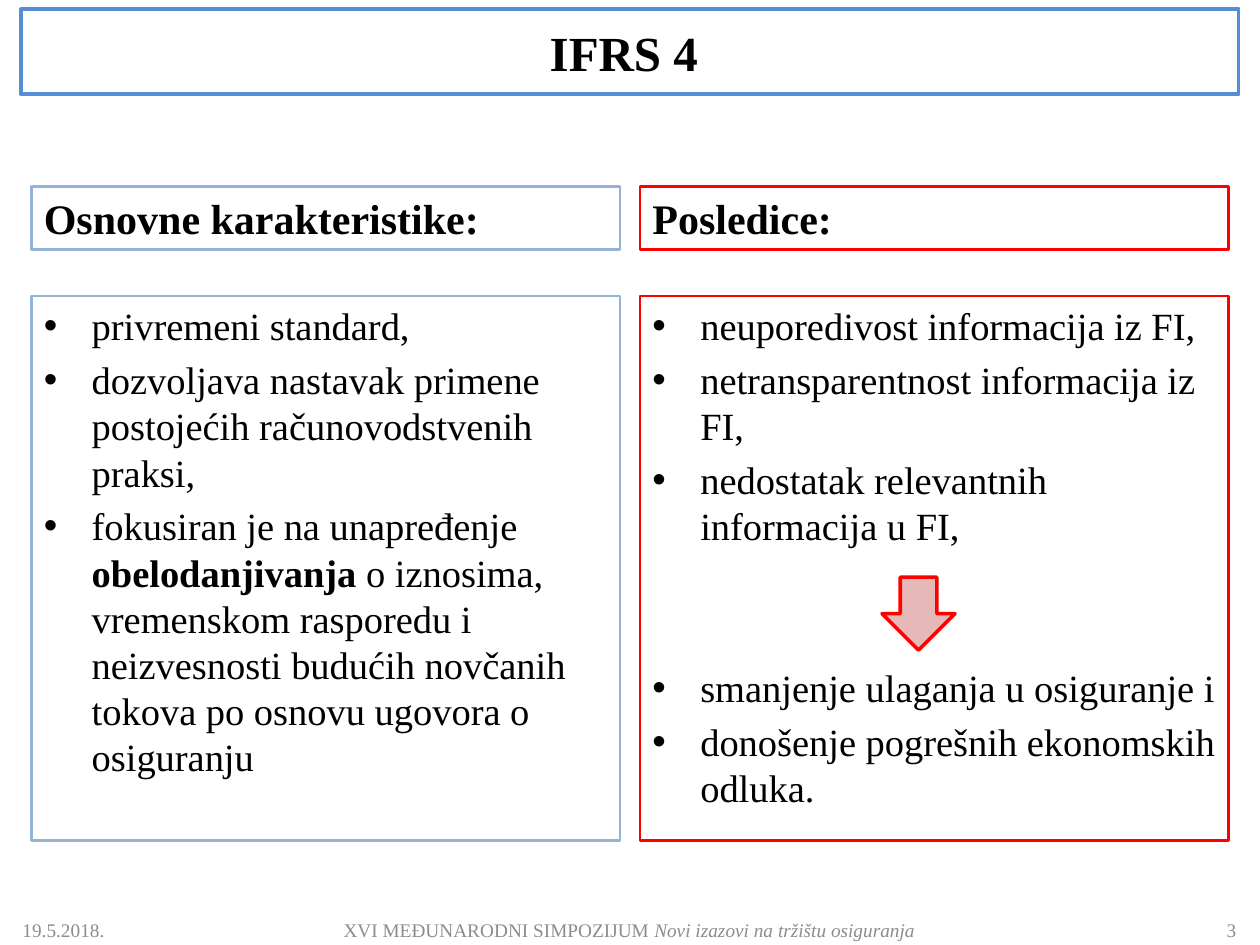
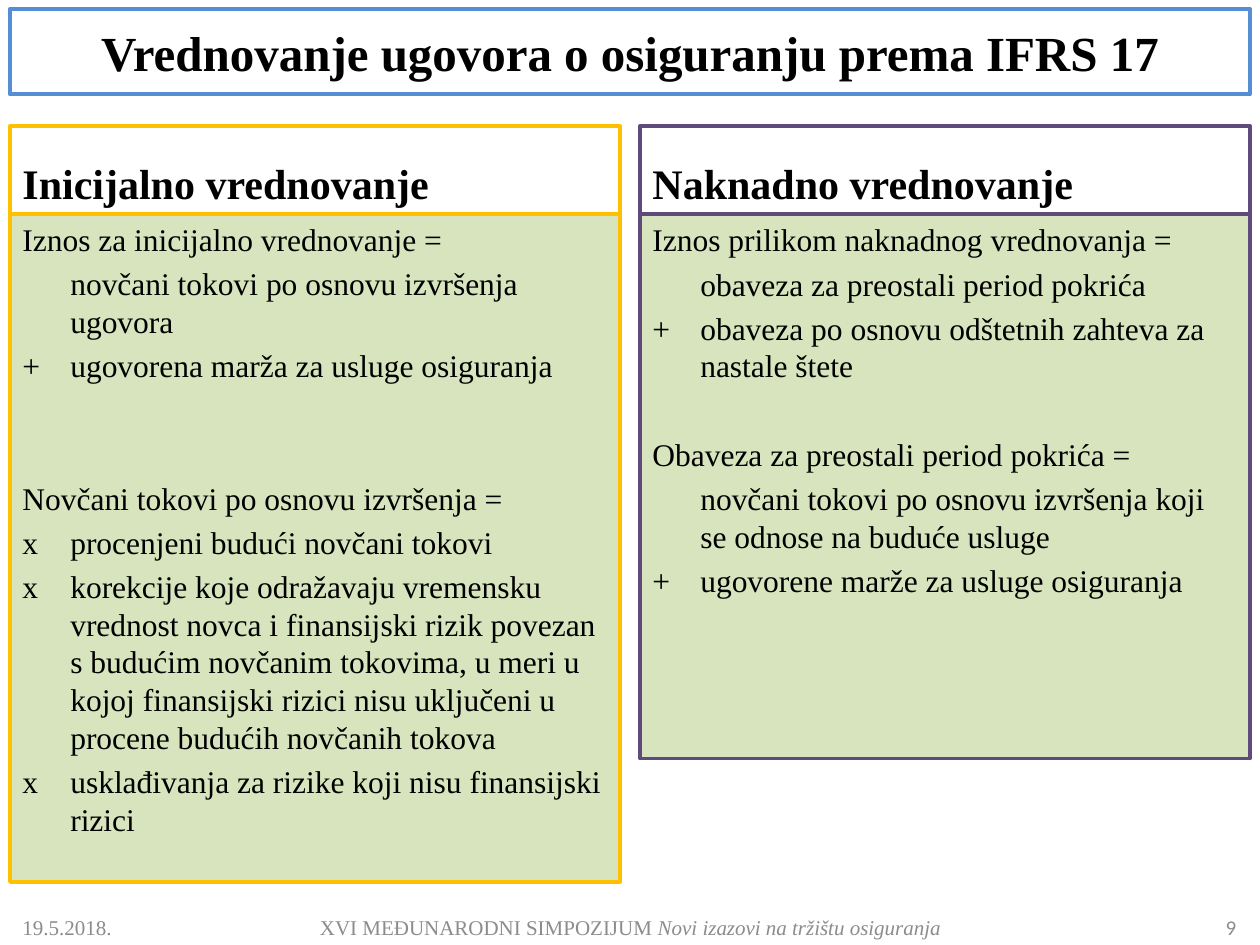
from dataclasses import dataclass

from lxml.etree import SubElement
from pptx import Presentation
from pptx.dml.color import RGBColor
from pptx.enum.shapes import MSO_SHAPE
from pptx.enum.text import MSO_ANCHOR, PP_ALIGN
from pptx.oxml.ns import qn
from pptx.util import Inches, Pt


@dataclass(frozen=True)
class Theme:
    font: str = "Times New Roman"
    number_font: str = "Calibri"
    ink: str = "000000"
    muted: str = "8C8C8C"
    white: str = "FFFFFF"
    title_line: str = "558ED5"
    blue: str = "95B3D7"
    red: str = "FF0000"
    pink: str = "E6B9B8"
    gold: str = "FFC000"
    purple: str = "604A7B"
    green: str = "D7E4BD"
    title_size: int = 28
    heading_size: int = 24
    list_size: int = 22
    formula_size: int = 18


THEME = Theme()
HANGING = 0.38
LEFT_COLUMN, RIGHT_COLUMN = 0, 1
RIGHT_COLUMN_X = 5.08


@dataclass(frozen=True)
class Item:
    """One paragraph; mark None continues at the indent, gap counts skipped lines."""
    text: str
    mark: str | None = ""
    gap: int = 0


def rgb(value):
    return RGBColor.from_string(value)


def write(paragraph, text, size, color=THEME.ink, font=THEME.font, bold=False,
          emphasis=None):
    """Write text in which the parts between bars take the emphasis ('bold' or 'italic')."""
    for index, part in enumerate(text.split("|")):
        run = paragraph.add_run()
        run.text = part
        run.font.size = Pt(size)
        run.font.name = font
        run.font.color.rgb = rgb(color)
        run.font.bold = bold
        if index % 2:
            setattr(run.font, emphasis, True)


def add_panel(slide, box, line, width, fill=None, anchor=MSO_ANCHOR.TOP,
              preset=MSO_SHAPE.RECTANGLE):
    panel = slide.shapes.add_shape(preset, *map(Inches, box))
    panel.shadow.inherit = False
    panel.line.color.rgb = rgb(line)
    panel.line.width = Pt(width)
    if fill:
        panel.fill.solid()
        panel.fill.fore_color.rgb = rgb(fill)
    else:
        panel.fill.background()
    panel.text_frame.word_wrap = True
    panel.text_frame.vertical_anchor = anchor
    return panel


def add_title(slide, text, left):
    band = add_panel(slide, (left, 0.07, 10 - 2 * left, 0.68), THEME.title_line, 2.25,
                     anchor=MSO_ANCHOR.MIDDLE)
    paragraph = band.text_frame.paragraphs[0]
    paragraph.alignment = PP_ALIGN.CENTER
    write(paragraph, text, THEME.title_size, bold=True)


def add_heading(slide, text, box, line, width, fill=None):
    panel = add_panel(slide, box, line, width, fill, MSO_ANCHOR.BOTTOM)
    paragraph = panel.text_frame.paragraphs[0]
    paragraph.alignment = PP_ALIGN.LEFT
    write(paragraph, text, THEME.heading_size, bold=True)


def set_indent(paragraph, item):
    properties = paragraph._p.get_or_add_pPr()
    properties.set("marL", str(Inches(HANGING)))
    properties.set("indent", str(0 if item.mark is None else -Inches(HANGING)))
    if item.mark == "•":
        SubElement(properties, qn("a:buFont")).set("typeface", "Arial")
        SubElement(properties, qn("a:buChar")).set("char", item.mark)
    else:
        SubElement(properties, qn("a:buNone"))


def add_items(slide, items, box, line, width, size, fill=None):
    frame = add_panel(slide, box, line, width, fill).text_frame
    for index, item in enumerate(items):
        paragraph = frame.add_paragraph() if index else frame.paragraphs[0]
        paragraph.alignment = PP_ALIGN.LEFT
        paragraph.space_before = Pt(size * (0.2 + 1.4 * item.gap))
        set_indent(paragraph, item)
        prefix = f"{item.mark}\t" if item.mark in ("+", "x") else ""
        write(paragraph, prefix + item.text, size, emphasis="bold")


def add_footer(slide, number, top, size, columns, number_font=THEME.font):
    """Place date, event and slide number; columns holds (left, width) of each."""
    texts = ("19.5.2018.",
             "XVI MEĐUNARODNI SIMPOZIJUM |Novi izazovi na tržištu osiguranja",
             str(number))
    aligns = (PP_ALIGN.LEFT, PP_ALIGN.CENTER, PP_ALIGN.RIGHT)
    fonts = (THEME.font, THEME.font, number_font)
    for text, align, font, (left, width) in zip(texts, aligns, fonts, columns):
        frame = slide.shapes.add_textbox(
            Inches(left), Inches(top), Inches(width), Inches(0.4)).text_frame
        frame.word_wrap = True
        frame.vertical_anchor = MSO_ANCHOR.MIDDLE
        frame.paragraphs[0].alignment = align
        write(frame.paragraphs[0], text, size, THEME.muted, font, emphasis="italic")


def build_ifrs4(slide):
    characteristics = [
        Item("privremeni standard,", "•"),
        Item("dozvoljava nastavak primene postojećih računovodstvenih praksi,", "•"),
        Item("fokusiran je na unapređenje |obelodanjivanja| o iznosima, vremenskom "
             "rasporedu i neizvesnosti budućih novčanih tokova po osnovu ugovora o "
             "osiguranju", "•"),
    ]
    consequences = [
        Item("neuporedivost informacija iz FI,", "•"),
        Item("netransparentnost informacija iz FI,", "•"),
        Item("nedostatak relevantnih informacija u FI,", "•"),
        Item("smanjenje ulaganja u osiguranje i", "•", gap=2),
        Item("donošenje pogrešnih ekonomskih odluka.", "•"),
    ]
    for left, heading, items, line in (
            (0.25, "Osnovne karakteristike:", characteristics, THEME.blue),
            (RIGHT_COLUMN_X, "Posledice:", consequences, THEME.red)):
        add_heading(slide, heading, (left, 1.48, 4.67, 0.5), line, 1.5)
        add_items(slide, items, (left, 2.35, 4.67, 4.32), line, 1.5, THEME.list_size)
    add_footer(slide, 3, 7.18, 11, ((0.08, 2.33), (2.58, 4.83), (7.58, 2.33)))
    add_title(slide, "IFRS 4 ", 0.17)
    add_panel(slide, (7, 4.58, 0.58, 0.58), THEME.red, 2, THEME.pink,
              preset=MSO_SHAPE.DOWN_ARROW)


def build_ifrs17(slide):
    initial = [
        Item("Iznos za inicijalno vrednovanje ="),
        Item("novčani tokovi po osnovu izvršenja ugovora", None),
        Item("ugovorena marža za usluge osiguranja", "+"),
        Item("Novčani tokovi po osnovu izvršenja =", gap=2),
        Item("procenjeni budući novčani tokovi", "x"),
        Item("korekcije koje odražavaju vremensku vrednost novca i finansijski rizik "
             "povezan s budućim novčanim tokovima, u meri u kojoj finansijski rizici "
             "nisu uključeni u procene budućih novčanih tokova", "x"),
        Item("usklađivanja za rizike koji nisu finansijski rizici", "x"),
    ]
    subsequent = [
        Item("Iznos prilikom naknadnog vrednovanja ="),
        Item("obaveza za preostali period pokrića", None),
        Item("obaveza po osnovu odštetnih zahteva za nastale štete", "+"),
        Item("Obaveza za preostali period pokrića =", gap=1),
        Item("novčani tokovi po osnovu izvršenja koji se odnose na buduće usluge", None),
        Item("ugovorene marže za usluge osiguranja", "+"),
    ]
    for left, heading, items, line, heading_fill, height in (
            (0.08, "Inicijalno vrednovanje", initial, THEME.gold, THEME.white, 5.3),
            (RIGHT_COLUMN_X, "Naknadno vrednovanje", subsequent, THEME.purple, None, 4.32)):
        add_heading(slide, heading, (left, 1, 4.84, 0.7), line, 2.25, heading_fill)
        add_items(slide, items, (left, 1.7, 4.84, height), line, 2.25,
                  THEME.formula_size, THEME.green)
    add_footer(slide, 9, 7.16, 12, ((0.08, 0.92), (2.42, 5.17), (9.08, 0.83)),
               THEME.number_font)
    add_title(slide, "Vrednovanje ugovora o osiguranju prema IFRS 17", 0.08)


def main():
    deck = Presentation()
    deck.slide_width, deck.slide_height = Inches(10), Inches(7.5)
    blank = deck.slide_layouts[6]
    for build in (build_ifrs4, build_ifrs17):
        build(deck.slides.add_slide(blank))
    deck.save("out.pptx")


if __name__ == "__main__":
    main()
